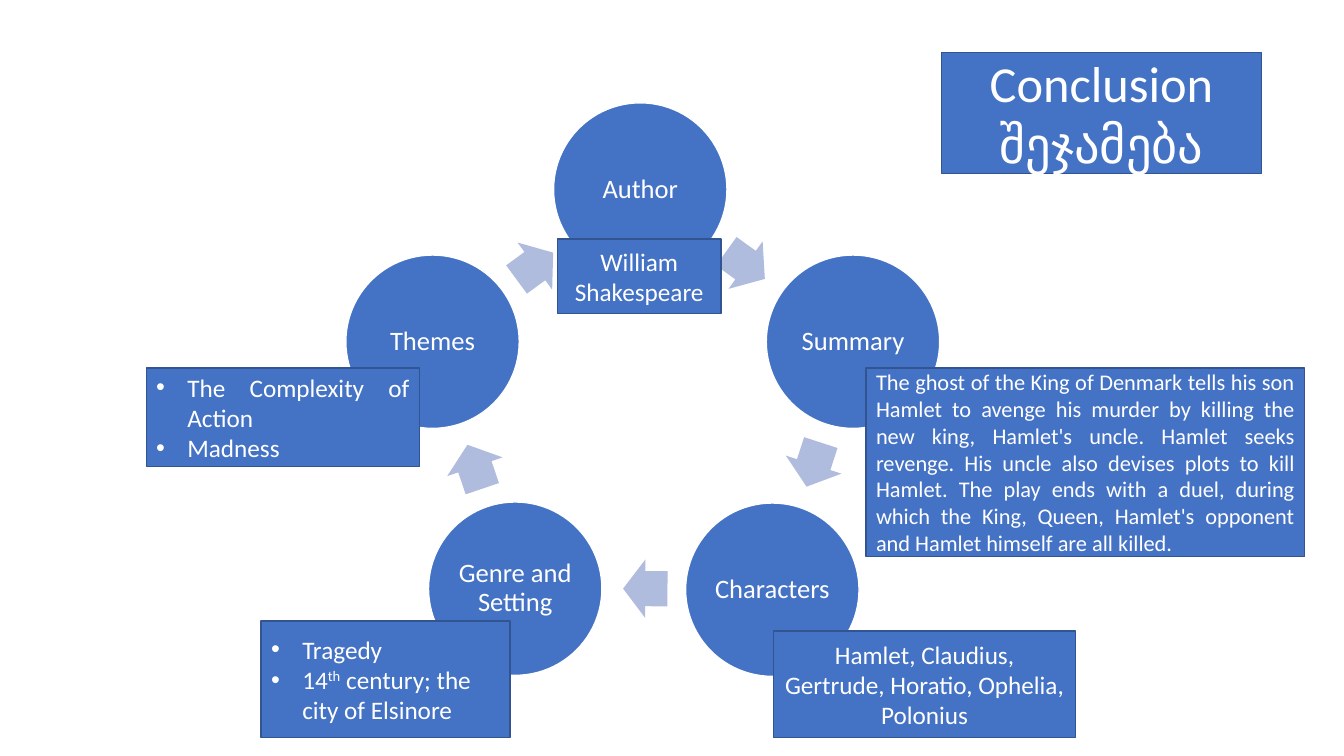
from pptx import Presentation
from pptx import util as u
from pptx.dml.color import RGBColor
from pptx.enum import shapes, text
from pptx.oxml.ns import qn

BLUE = RGBColor(0x44, 0x72, 0xC4)
DARK_BLUE = RGBColor(0x32, 0x54, 0x91)
PALE_BLUE = RGBColor(0xB0, 0xBC, 0xDE)
WHITE = RGBColor(0xFF, 0xFF, 0xFF)

CENTER = text.PP_ALIGN.CENTER
JUSTIFY = text.PP_ALIGN.JUSTIFY
LEFT = text.PP_ALIGN.LEFT

CIRCLE_SIZE = 1.72
ARROW_HEIGHT = 0.58


class CycleSlide:
    font_name = "Calibri"
    bullet_indent = u.Inches(0.31)

    def __init__(self, slide):
        self.slide = slide

    def shape(self, kind, place, fill, outline=None):
        item = self.slide.shapes.add_shape(kind, *map(u.Inches, place))
        item.shadow.inherit = False
        item.fill.solid()
        item.fill.fore_color.rgb = fill
        if outline is None:
            item.line.fill.background()
        else:
            item.line.color.rgb = outline
            item.line.width = u.Pt(1)
        return item

    def bullet(self, paragraph):
        properties = paragraph._p.get_or_add_pPr()
        properties.set("marL", str(self.bullet_indent))
        properties.set("indent", str(-self.bullet_indent))
        font = properties.makeelement(qn("a:buFont"), {"typeface": "Arial"})
        mark = properties.makeelement(qn("a:buChar"), {"char": "•"})
        properties.extend([font, mark])

    def label(self, item, lines, size, bulleted=False, **layout):
        frame = item.text_frame
        frame.word_wrap = True
        frame.vertical_anchor = text.MSO_ANCHOR.MIDDLE
        for index, line in enumerate(lines):
            paragraph = frame.paragraphs[0] if index == 0 else frame.add_paragraph()
            if bulleted:
                self.bullet(paragraph)
            for name, value in layout.items():
                setattr(paragraph, name, value)
            opening, *rest = line.split("^")
            paragraph.text = opening
            for position, part in enumerate(rest):
                run = paragraph.add_run()
                run.text = part
                if position % 2 == 0:
                    run._r.get_or_add_rPr().set("baseline", "30000")
            for run in paragraph.runs:
                style = {"name": self.font_name, "size": u.Pt(size)}
                for name, value in style.items():
                    setattr(run.font, name, value)
                run.font.color.rgb = WHITE

    def box(self, place, lines, size=18, alignment=CENTER, bulleted=False):
        item = self.shape(shapes.MSO_SHAPE.RECTANGLE, place, BLUE, DARK_BLUE)
        self.label(item, lines, size, bulleted, alignment=alignment)

    def circle(self, left, top, caption):
        place = (left, top, CIRCLE_SIZE, CIRCLE_SIZE)
        item = self.shape(shapes.MSO_SHAPE.OVAL, place, BLUE, WHITE)
        for side in ("left", "top", "right", "bottom"):
            setattr(item.text_frame, f"margin_{side}", u.Inches(0.03))
        self.label(item, [caption], 19, alignment=CENTER, line_spacing=0.9)

    def arrow(self, left, top, width, angle):
        place = (left, top, width, ARROW_HEIGHT)
        item = self.shape(shapes.MSO_SHAPE.RIGHT_ARROW, place, PALE_BLUE)
        item.adjustments[0] = 0.6
        item.adjustments[1] = 0.5
        item.rotation = angle


STAGES = [
    ((5.49, 1.02, "Author"), (7.16, 2.34, 0.47, 35.7)),
    ((7.6, 2.53, "Summary"), (7.84, 4.32, 0.46, 108)),
    ((6.8, 4.99, "Characters"), (6.18, 5.55, 0.44, 180.2)),
    ((4.25, 4.98, "Genre and Setting"), (4.48, 4.34, 0.46, 251.3)),
    ((3.43, 2.53, "Themes"), (5.08, 2.35, 0.45, 323.7)),
]

PLOT = (
    "The ghost of the King of Denmark tells his son Hamlet to avenge his murder "
    "by killing the new king, Hamlet's uncle. Hamlet seeks revenge. His uncle also "
    "devises plots to kill Hamlet. The play ends with a duel, during which the King, "
    "Queen, Hamlet's opponent and Hamlet himself are all killed."
)


def main():
    deck = Presentation()
    deck.slide_width = u.Inches(13.33)
    deck.slide_height = u.Inches(7.5)
    page = CycleSlide(deck.slides.add_slide(deck.slide_layouts[6]))

    page.box((9.34, 0.52, 3.17, 1.2), ["Conclusion\vშეჯამება"], size=36)
    for circle, arrow in STAGES:
        page.circle(*circle)
        page.arrow(*arrow)

    page.box((5.53, 2.37, 1.62, 0.74), ["William Shakespeare"])
    page.box((1.45, 3.65, 2.71, 0.98), ["The Complexity of Action", "Madness"],
             alignment=JUSTIFY, bulleted=True)
    page.box((2.59, 6.16, 2.47, 1.16),
             ["Tragedy", "14^th^ century; the city of Elsinore"],
             alignment=LEFT, bulleted=True)
    page.box((7.67, 6.26, 3, 1.06),
             ["Hamlet, Claudius, Gertrude, Horatio, Ophelia, Polonius"])
    page.box((8.59, 3.65, 4.35, 1.87), [PLOT], size=16, alignment=JUSTIFY)

    deck.save("out.pptx")


if __name__ == "__main__":
    main()
